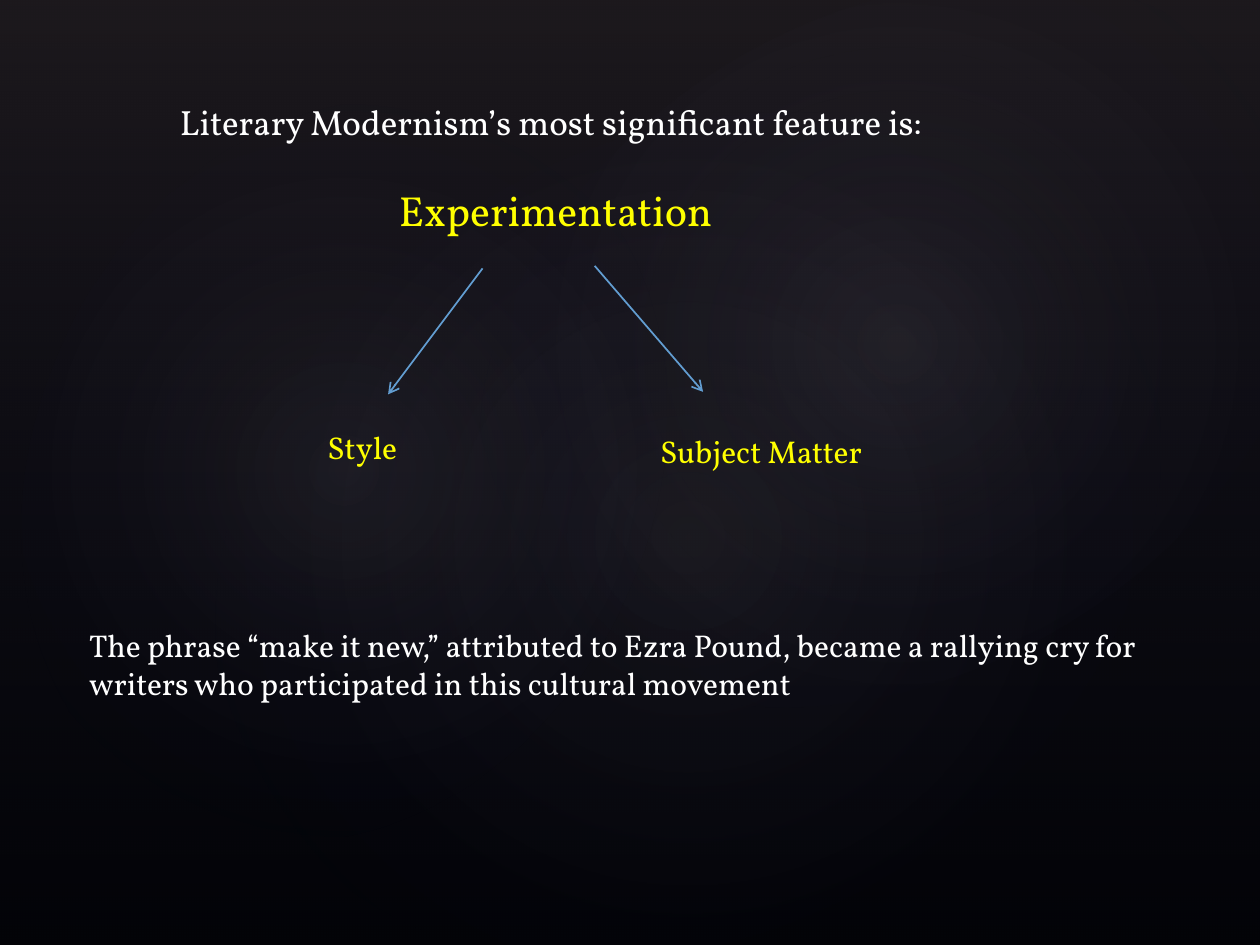
from lxml import etree
from pptx import Presentation
from pptx.dml.color import RGBColor
from pptx.enum.shapes import MSO_CONNECTOR, MSO_SHAPE
from pptx.enum.text import PP_ALIGN
from pptx.oxml import parse_xml
from pptx.oxml.ns import nsdecls, qn
from pptx.util import Pt

COLORS = {"background": "000000", "text": "FFFFFF", "key": "FFFF00", "arrow": "629DD1",
          "haze": "504652", "navy": "242852", "glow": "C4BCC6"}
FONT = "Vollkorn"
SLIDE_SIZE = (720, 540)

# left, top, width, height, rotation, opacity at the centre in percent
GLOWS = [
    (108, 82.08, 570.24, 449.28, 328.7, 7),
    (-21.6, 92.16, 436.32, 352.8, 294.3, 8),
    (257.76, 9.36, 510.48, 374.4, 328.7, 8),
]
LINEAR = '<a:lin ang="5400000" scaled="0"/>'
RADIAL = ('<a:path path="circle">'
          '<a:fillToRect l="50000" t="50000" r="50000" b="50000"/></a:path>')

# box (left, top, width, height), paragraphs (text, size, colour, alignment, space before)
TEXTS = [
    ((95.76, 54, 443.5, 104.4), [
        ("Literary Modernism’s most significant feature is:", 20, "text", PP_ALIGN.LEFT, 0),
        ("Experimentation", 24, "key", PP_ALIGN.CENTER, 24)]),
    ((43.92, 354.24, 617.76, 51.12), [
        ("The phrase “make it new,” attributed to Ezra Pound, became a rallying cry for "
         "writers who participated in this cultural movement", 18, "text", PP_ALIGN.LEFT, 0)]),
    ((180, 241.2, 58, 28.8), [("Style", 18, "key", PP_ALIGN.LEFT, 0)]),
    ((370.08, 243.36, 134, 28.8), [("Subject Matter", 18, "key", PP_ALIGN.LEFT, 0)]),
]
ARROWS = [(339.84, 151.92, 401.76, 223.92), (275.76, 153.36, 221.76, 225.36)]


def points(values):
    return [Pt(value) for value in values]


def color(name):
    return RGBColor.from_string(COLORS[name])


def add_gradient_shape(slide, kind, box, stops, direction, rotation=0):
    """Stops are (position, colour name, opacity), in percent."""
    shape = slide.shapes.add_shape(kind, *points(box))
    shape.rotation = rotation
    shape.shadow.inherit = False
    shape.line.fill.background()
    stop_xml = "".join(
        f'<a:gs pos="{position * 1000}"><a:srgbClr val="{COLORS[name]}">'
        f'<a:alpha val="{opacity * 1000}"/></a:srgbClr></a:gs>'
        for position, name, opacity in stops)
    gradient = parse_xml(f'<a:gradFill {nsdecls("a")} rotWithShape="1">'
                         f'<a:gsLst>{stop_xml}</a:gsLst>{direction}</a:gradFill>')
    shape.element.spPr.find(qn("a:prstGeom")).addnext(gradient)


def add_text(slide, box, paragraphs):
    frame = slide.shapes.add_textbox(*points(box)).text_frame
    frame.word_wrap = True
    for index, (text, size, color_name, alignment, space) in enumerate(paragraphs):
        paragraph = frame.add_paragraph() if index else frame.paragraphs[0]
        paragraph.text = text
        paragraph.alignment = alignment
        paragraph.space_before = Pt(space)
        paragraph.font.name = FONT
        paragraph.font.size = Pt(size)
        paragraph.font.color.rgb = color(color_name)


def add_arrow(slide, ends):
    arrow = slide.shapes.add_connector(MSO_CONNECTOR.STRAIGHT, *points(ends))
    arrow.line.color.rgb = color("arrow")
    arrow.line.width = Pt(1)
    etree.SubElement(arrow.line._get_or_add_ln(), qn("a:tailEnd"), type="arrow")
    etree.SubElement(arrow._element.spPr, qn("a:effectLst"))


def main():
    presentation = Presentation()
    presentation.slide_width, presentation.slide_height = points(SLIDE_SIZE)
    slide = presentation.slides.add_slide(presentation.slide_layouts[6])
    slide.background.fill.solid()
    slide.background.fill.fore_color.rgb = color("background")

    add_gradient_shape(slide, MSO_SHAPE.RECTANGLE, (0, 0, *SLIDE_SIZE),
                       [(0, "haze", 36), (100, "navy", 10)], LINEAR)
    for *box, rotation, opacity in GLOWS:
        add_gradient_shape(slide, MSO_SHAPE.OVAL, box,
                           [(0, "glow", opacity), (58, "navy", 0), (100, "navy", 0)],
                           RADIAL, rotation)
    for box, paragraphs in TEXTS:
        add_text(slide, box, paragraphs)
    for ends in ARROWS:
        add_arrow(slide, ends)
    presentation.save("out.pptx")


if __name__ == "__main__":
    main()
